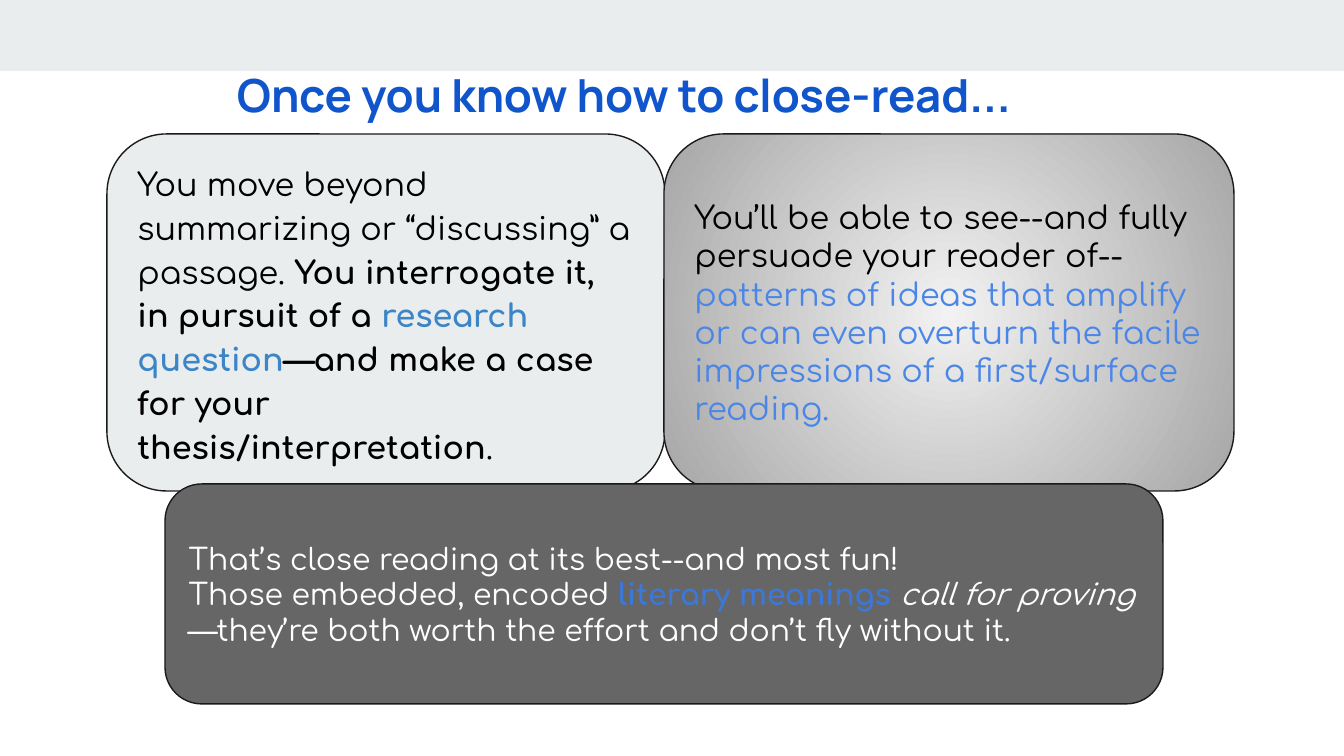
from lxml.etree import SubElement
from pptx import Presentation
from pptx.dml.color import RGBColor
from pptx.enum.shapes import MSO_SHAPE
from pptx.enum.text import MSO_ANCHOR, PP_ALIGN
from pptx.oxml.ns import qn
from pptx.util import Emu, Pt

EMU_PER_PX = 914400 / 134.4

BLACK = RGBColor(0x00, 0x00, 0x00)
WHITE = RGBColor(0xFF, 0xFF, 0xFF)
OUTLINE = RGBColor(0x1A, 0x1A, 0x1A)
PALE = RGBColor(0xE9, 0xED, 0xEE)
DARK = RGBColor(0x66, 0x66, 0x66)
GLOW = RGBColor(0xF2, 0xF2, 0xF2)
RIM = RGBColor(0xA6, 0xA6, 0xA6)
TITLE_BLUE = RGBColor(0x11, 0x55, 0xCC)
QUESTION_BLUE = RGBColor(0x3D, 0x85, 0xC6)
PATTERN_BLUE = RGBColor(0x4A, 0x86, 0xE8)
MEANING_BLUE = RGBColor(0x3C, 0x78, 0xD8)


def px(length):
    return Emu(round(length * EMU_PER_PX))


class SlideBuilder:
    body_font = "Comfortaa"
    title_font = "Manrope"
    inset = 13
    corner = 0.167

    def __init__(self, page):
        self.page = page

    def band(self, left, top, width, height, color):
        band = self.page.shapes.add_shape(
            MSO_SHAPE.RECTANGLE, px(left), px(top), px(width), px(height))
        band.shadow.inherit = False
        band.fill.solid()
        band.fill.fore_color.rgb = color
        band.line.fill.background()

    def card(self, left, top, width, height, colors):
        """Rounded card: one color is solid, two glow from the center."""
        card = self.page.shapes.add_shape(
            MSO_SHAPE.ROUNDED_RECTANGLE, px(left), px(top), px(width), px(height))
        card.adjustments[0] = self.corner
        card.shadow.inherit = False
        if len(colors) == 1:
            card.fill.solid()
            card.fill.fore_color.rgb = colors[0]
        else:
            self.radial_fill(card, colors)
        card.line.color.rgb = OUTLINE
        card.line.width = Pt(0.75)
        self.frame(card, MSO_ANCHOR.MIDDLE)
        return card

    def radial_fill(self, card, colors):
        card.fill.gradient()
        for stop, color in zip(card.fill.gradient_stops, colors):
            stop.color.rgb = color
        gradient = card._element.spPr.find(qn("a:gradFill"))
        gradient.remove(gradient.find(qn("a:lin")))
        shade = SubElement(gradient, qn("a:path"), {"path": "circle"})
        SubElement(shade, qn("a:fillToRect"), dict.fromkeys("ltrb", "50000"))

    def title(self, left, top, width, height, text):
        box = self.page.shapes.add_textbox(px(left), px(top), px(width), px(height))
        self.frame(box, MSO_ANCHOR.TOP)
        self.paragraph(box, 24.4, [(text, TITLE_BLUE, "b")], font=self.title_font)

    def frame(self, box, anchor):
        frame = box.text_frame
        frame.word_wrap = True
        frame.vertical_anchor = anchor
        frame.margin_left = frame.margin_right = px(self.inset)
        frame.margin_top = frame.margin_bottom = px(self.inset)

    def paragraph(self, box, size, spans, font=body_font, first=True):
        """Spans are (text, color, style), where style holds b and/or i."""
        frame = box.text_frame
        para = frame.paragraphs[0] if first else frame.add_paragraph()
        para.alignment = PP_ALIGN.LEFT
        for text, color, style in spans:
            span = para.add_run()
            span.text = text
            span.font.name = font
            span.font.size = Pt(size)
            span.font.color.rgb = color
            span.font.bold = "b" in style
            span.font.italic = "i" in style
        return para


def main():
    deck = Presentation()
    deck.slide_width, deck.slide_height = px(1344), px(756)
    page = deck.slides.add_slide(deck.slide_layouts[6])
    builder = SlideBuilder(page)

    # Top band
    builder.band(0, 0, 1344, 71, PALE)

    # Left card: from summary to interrogation
    interrogate = builder.card(107, 134, 558, 357, [PALE])
    para = builder.paragraph(interrogate, 17, [
        ("You move beyond summarizing or “discussing” a passage. ", BLACK, ""),
        ("You interrogate it, in pursuit of a ", BLACK, "b"),
        ("research question", QUESTION_BLUE, "b"),
        ("—and make a case for your thesis/interpretation", BLACK, "b"),
        (".", BLACK, ""),
    ])
    para.line_spacing = 1.15
    para.space_before = Pt(12)
    para.space_after = Pt(5)

    # Right card: patterns of ideas
    patterns = builder.card(664, 134, 570, 357, [GLOW, RIM])
    builder.paragraph(patterns, 17, [
        ("You’ll be able to see--and fully persuade your reader of--", BLACK, ""),
        ("patterns of ideas that amplify or can even overturn the facile "
         "impressions of a first/surface reading.", PATTERN_BLUE, ""),
    ])

    # Bottom card: conclusion
    conclusion = builder.card(165, 484, 998, 220, [DARK])
    builder.paragraph(conclusion, 16, [
        ("That’s close reading at its best--and most fun!", WHITE, "")])
    builder.paragraph(conclusion, 16, [
        ("Those embedded, encoded ", WHITE, ""),
        ("literary meanings ", MEANING_BLUE, "b"),
        ("call for proving", WHITE, "i"),
        ("—they’re both worth the effort and don’t fly without it.", WHITE, ""),
    ], first=False)

    # Title
    builder.title(224, 54, 1036, 79, "Once you know how to close-read...")

    deck.save("out.pptx")


if __name__ == "__main__":
    main()
